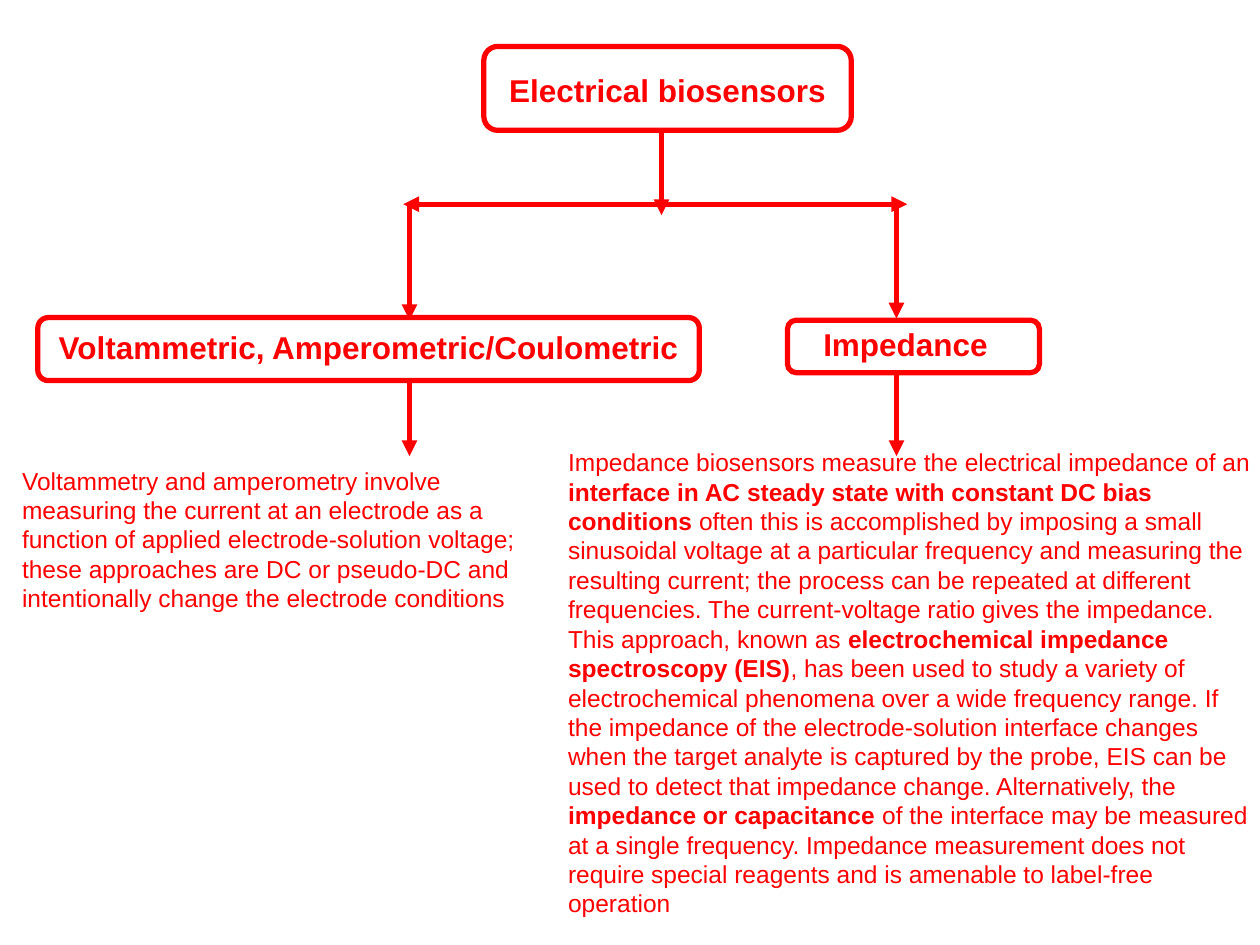
from lxml import etree
from pptx import Presentation
from pptx.dml.color import RGBColor
from pptx.enum.shapes import MSO_CONNECTOR, MSO_SHAPE
from pptx.enum.text import MSO_ANCHOR, PP_ALIGN
from pptx.oxml.ns import qn
from pptx.util import Pt

ROUND = MSO_SHAPE.ROUNDED_RECTANGLE
STRAIGHT = MSO_CONNECTOR.STRAIGHT
MIDDLE = MSO_ANCHOR.MIDDLE
CENTER = PP_ALIGN.CENTER

# Wording: (text, bold) pairs for the two descriptions
VOLT = [
    ("Voltammetry and amperometry involve measuring the current at an "
     "electrode as a function of applied electrode-solution voltage; these "
     "approaches are DC or pseudo-DC and intentionally change the electrode "
     "conditions", False),
]
IMPED = [
    ("Impedance biosensors measure the electrical impedance of an ", False),
    ("interface in AC steady state with constant DC bias conditions ", True),
    ("often this is accomplished by imposing a small sinusoidal voltage at a "
     "particular frequency and measuring the resulting current; the process "
     "can be repeated at different frequencies. The current-voltage ratio "
     "gives the impedance. This approach, known as ", False),
    ("electrochemical impedance spectroscopy (EIS)", True),
    (", has been used to study a variety of electrochemical phenomena over a "
     "wide frequency range. If the impedance of the electrode-solution "
     "interface changes when the target analyte is captured by the probe, EIS "
     "can be used to detect that impedance change. Alternatively, the ", False),
    ("impedance or capacitance ", True),
    ("of the interface may be measured at a single frequency. Impedance "
     "measurement does not require special reagents and is amenable to "
     "label-free operation", False),
]


def color(code):
    return RGBColor.from_string(code)


class Chart:
    font = "Arial"
    red = color("FF0000")
    head = 18
    body = 14
    weight = 3

    def __init__(self, slide):
        self.slide = slide

    def style(self, font, size):
        font.name = self.font
        font.size = Pt(size)
        font.color.rgb = self.red

    def stroke(self, line):
        line.color.rgb = self.red
        line.width = Pt(self.weight)

    def box(self, label, x, y, w, h, right=0, top=0, bottom=0):
        """Outlined heading; the insets shift its centred label."""
        shape = self.slide.shapes.add_shape(ROUND, Pt(x), Pt(y), Pt(w), Pt(h))
        shape.shadow.inherit = False
        shape.fill.background()
        self.stroke(shape.line)
        frame = shape.text_frame
        frame.word_wrap = True
        frame.vertical_anchor = MIDDLE
        frame.margin_left = 0
        frame.margin_right = Pt(right)
        frame.margin_top = Pt(top)
        frame.margin_bottom = Pt(bottom)
        para = frame.paragraphs[0]
        para.text = label
        para.alignment = CENTER
        self.style(para.font, self.head)
        para.font.bold = True

    def text(self, parts, x, y, w, h):
        area = self.slide.shapes.add_textbox(Pt(x), Pt(y), Pt(w), Pt(h))
        area.text_frame.word_wrap = True
        para = area.text_frame.paragraphs[0]
        self.style(para.font, self.body)
        for words, bold in parts:
            run = para.add_run()
            run.text = words
            run.font.bold = bold

    def arrow(self, x1, y1, x2, y2):
        link = self.slide.shapes.add_connector(
            STRAIGHT, Pt(x1), Pt(y1), Pt(x2), Pt(y2))
        self.stroke(link.line)
        props = link.line._get_or_add_ln()
        etree.SubElement(props, qn("a:tailEnd"), type="triangle")
        etree.SubElement(link._element.spPr, qn("a:effectLst"))


def main():
    deck = Presentation()
    deck.slide_width = Pt(720)
    deck.slide_height = Pt(540)
    chart = Chart(deck.slides.add_slide(deck.slide_layouts[6]))

    # Headings
    chart.box("Electrical biosensors", 276.5, 26.5, 210, 48, top=2)
    chart.box("Voltammetric, Amperometric/Coulometric",
              21.6, 181.5, 378, 36, top=0, bottom=2)
    chart.box("Impedance", 450, 183, 144, 30, right=9, bottom=3)

    # Descriptions
    chart.text(VOLT, 5.5, 262.5, 322.5, 92)
    chart.text(IMPED, 317.5, 252, 408, 279)

    # Stem and the two branches
    stem, fork, low = 378, 116.7, 260.6
    chart.arrow(stem, 75, stem, 123)
    for mid, tip, top, base in ((234, 230.5, 183, 218),
                                (512.3, 518.4, 182, 213)):
        chart.arrow(stem, fork, tip, fork)
        chart.arrow(mid, fork, mid, top)
        chart.arrow(mid, base, mid, low)

    deck.save("out.pptx")


if __name__ == "__main__":
    main()
